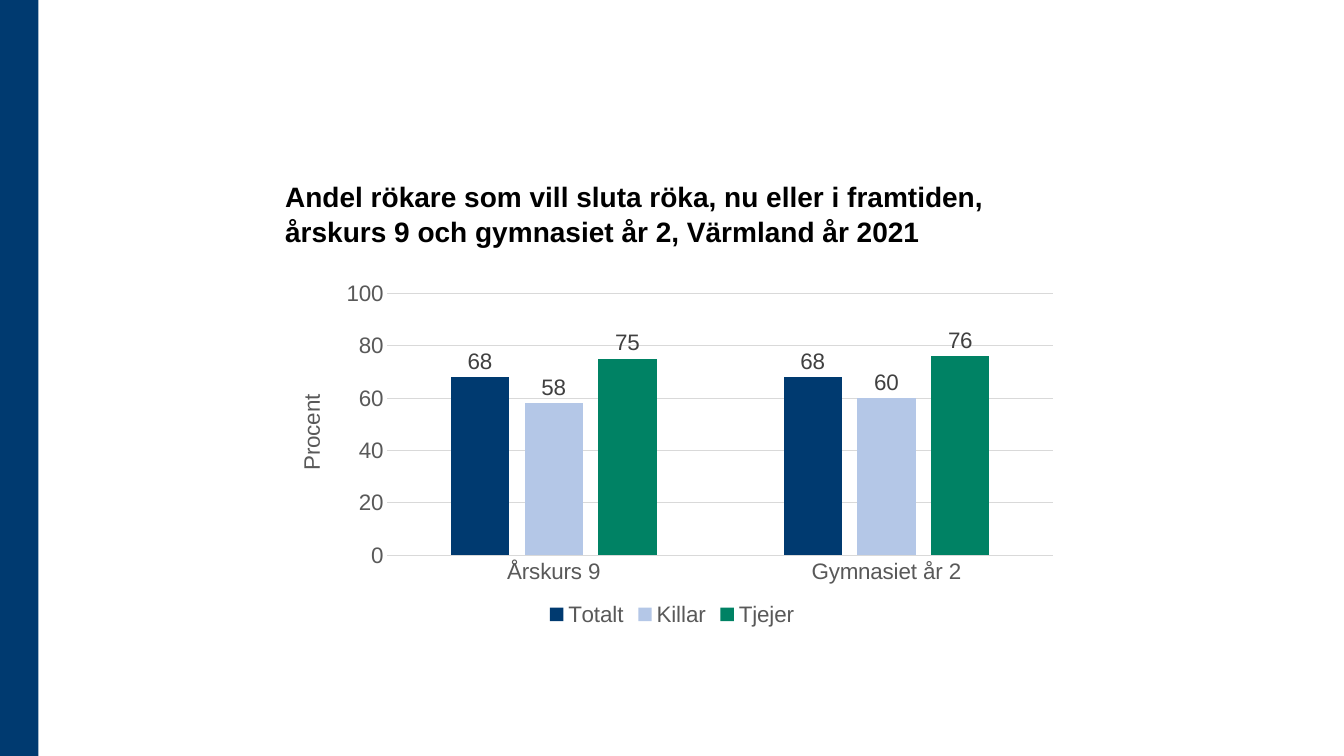
import pptx
import pptx.chart.data
import pptx.dml.color
import pptx.enum.chart
import pptx.enum.shapes
import pptx.enum.text
import pptx.util
from pptx.util import Inches

# Content
TITLE = ("Andel rökare som vill sluta röka, nu eller i framtiden, "
         "årskurs 9 och gymnasiet år 2, Värmland år 2021")
AXIS_TITLE = "Procent"
GRADES = ["Årskurs 9", "Gymnasiet år 2"]
SERIES = [
    ("Totalt", (68, 68), "navy"),
    ("Killar", (58, 60), "light_blue"),
    ("Tjejer", (75, 76), "green"),
]
COLOURS = {
    "navy": "003A70",
    "light_blue": "B4C7E7",
    "green": "008264",
    "black": "000000",
    "label": "404040",
    "axis": "595959",
    "grid": "D9D9D9",
}

# Layout
LEFT, WIDTH = 2.73, 7.87
TITLE_TOP, TITLE_HEIGHT = 1.06, 1.45
CHART_TOP, CHART_HEIGHT = 2.72, 3.54


def colour(name):
    return pptx.dml.color.RGBColor.from_string(COLOURS[name])


def style_font(font, size, name, bold=False):
    font.name = "Arial"
    font.size = pptx.util.Pt(size)
    font.bold = bold
    font.color.rgb = colour(name)


def style_line(line):
    line.color.rgb = colour("grid")
    line.width = pptx.util.Pt(0.75)


def add_side_band(slide, height):
    band = slide.shapes.add_shape(
        pptx.enum.shapes.MSO_SHAPE.RECTANGLE, 0, 0, Inches(0.38), height)
    band.shadow.inherit = False
    band.fill.solid()
    band.fill.fore_color.rgb = colour("navy")
    band.line.fill.background()


def add_title(slide):
    box = slide.shapes.add_textbox(
        Inches(LEFT), Inches(TITLE_TOP), Inches(WIDTH), Inches(TITLE_HEIGHT))
    frame = box.text_frame
    frame.word_wrap = True
    frame.vertical_anchor = pptx.enum.text.MSO_ANCHOR.BOTTOM
    para = frame.paragraphs[0]
    para.text = TITLE
    para.line_spacing = 1.05
    style_font(para.font, 20, "black", bold=True)


def add_smoker_chart(slide):
    data = pptx.chart.data.CategoryChartData(number_format="0")
    data.categories = GRADES
    for name, values, _ in SERIES:
        data.add_series(name, values)
    chart = slide.shapes.add_chart(
        pptx.enum.chart.XL_CHART_TYPE.COLUMN_CLUSTERED,
        Inches(LEFT), Inches(CHART_TOP), Inches(WIDTH), Inches(CHART_HEIGHT),
        data).chart
    style_font(chart.font, 16, "black")
    chart.has_title = False

    # Legend
    chart.has_legend = True
    chart.legend.position = pptx.enum.chart.XL_LEGEND_POSITION.BOTTOM
    chart.legend.include_in_layout = False
    style_font(chart.legend.font, 16, "axis")

    # Axes
    for axis in (chart.category_axis, chart.value_axis):
        axis.major_tick_mark = pptx.enum.chart.XL_TICK_MARK.NONE
        axis.minor_tick_mark = pptx.enum.chart.XL_TICK_MARK.NONE
        style_font(axis.tick_labels.font, 16, "axis")
    style_line(chart.category_axis.format.line)
    percent = chart.value_axis
    percent.minimum_scale = 0
    percent.maximum_scale = 100
    percent.major_unit = 20
    percent.format.line.fill.background()
    percent.has_major_gridlines = True
    style_line(percent.major_gridlines.format.line)
    percent.tick_labels.number_format = "0"
    percent.tick_labels.number_format_is_linked = False
    para = percent.axis_title.text_frame.paragraphs[0]
    para.text = AXIS_TITLE
    style_font(para.font, 16, "axis")

    # Columns and their values
    plot = chart.plots[0]
    plot.vary_by_categories = False
    plot.gap_width = 219
    plot.overlap = -27
    for series, (_, _, fill) in zip(plot.series, SERIES):
        series.invert_if_negative = False
        series.format.fill.solid()
        series.format.fill.fore_color.rgb = colour(fill)
        labels = series.data_labels
        labels.show_value = True
        labels.position = pptx.enum.chart.XL_LABEL_POSITION.OUTSIDE_END
        labels.number_format = "0"
        labels.number_format_is_linked = False
        style_font(labels.font, 16, "label")


def main():
    deck = pptx.Presentation()
    deck.slide_width = Inches(13.33)
    deck.slide_height = Inches(7.5)
    slide = deck.slides.add_slide(deck.slide_layouts[6])
    add_side_band(slide, deck.slide_height)
    add_title(slide)
    add_smoker_chart(slide)
    deck.save("out.pptx")


if __name__ == "__main__":
    main()
